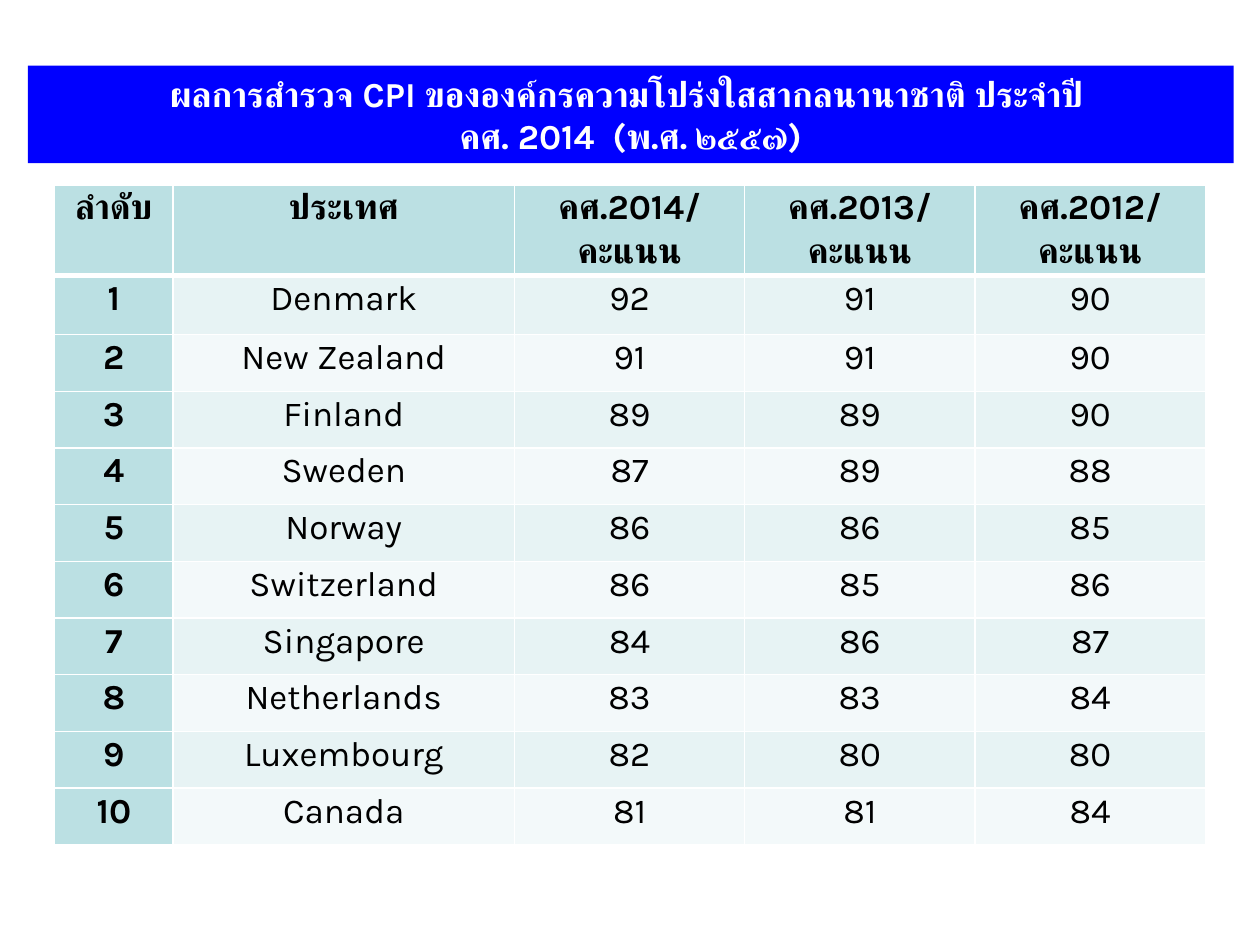
from lxml import etree
from pptx import Presentation
from pptx.dml.color import RGBColor
from pptx.enum.text import MSO_ANCHOR, MSO_AUTO_SIZE, PP_ALIGN
from pptx.oxml.ns import qn
from pptx.util import Pt

FONT = "Karla"
TITLE = ["ผลการสำรวจ CPI ขององค์กรความโปร่งใสสากลนานาชาติ ประจำปี ",
         "คศ. 2014  (พ.ศ. ๒๕๕๗)"]
HEADER = ["ลำดับ", "ประเทศ", "คศ.2014/คะแนน", "คศ.2013/คะแนน", "คศ.2012/คะแนน"]
SCORES = [
    ("Denmark", 92, 91, 90),
    ("New Zealand", 91, 91, 90),
    ("Finland", 89, 89, 90),
    ("Sweden", 87, 89, 88),
    ("Norway", 86, 86, 85),
    ("Switzerland", 86, 85, 86),
    ("Singapore", 84, 86, 87),
    ("Netherlands", 83, 83, 84),
    ("Luxembourg", 82, 80, 80),
    ("Canada", 81, 81, 84),
]


def rgb(value):
    return RGBColor.from_string(value)


def write(p, text, size=20, color="000000", bold=False, spacing=None):
    p.alignment = PP_ALIGN.CENTER
    if spacing:
        p.line_spacing = spacing
    r = p.add_run()
    r.text = text
    r.font.size = Pt(size)
    r.font.bold = bold
    r.font.name = FONT
    r.font.color.rgb = rgb(color)
    etree.SubElement(r.font._element, qn("a:cs"), typeface=FONT)


def add_border(cell, side, width, color="FFFFFF"):
    tcPr = cell._tc.get_or_add_tcPr()
    ln = etree.SubElement(tcPr, qn(f"a:ln{side}"), w=str(Pt(width)))
    fill = etree.SubElement(ln, qn("a:solidFill"))
    etree.SubElement(fill, qn("a:srgbClr"), val=color)


def add_title(s, left, top, width, height):
    sp = s.shapes.title
    sp.left, sp.top, sp.width, sp.height = map(Pt, (left, top, width, height))
    sp.fill.solid()
    sp.fill.fore_color.rgb = rgb("0000FF")
    tf = sp.text_frame
    tf.word_wrap = True
    tf.auto_size = MSO_AUTO_SIZE.NONE
    tf.vertical_anchor = MSO_ANCHOR.MIDDLE
    for i, line in enumerate(TITLE):
        p = tf.add_paragraph() if i else tf.paragraphs[0]
        write(p, line, color="FFFFFF", bold=True)


def add_scores(s, left, top, width, height):
    rows = [HEADER] + [(rank, *score) for rank, score in enumerate(SCORES, 1)]
    table = s.shapes.add_table(len(rows), len(HEADER), Pt(left), Pt(top),
                               Pt(width), Pt(height)).table
    rank_w, country_w, header_h, first_h = 67.7, 195.1, 51.8, 33.8
    score_w = (width - rank_w - country_w) / 3
    row_h = (height - header_h - first_h) / (len(SCORES) - 1)
    for col, w in zip(table.columns, [rank_w, country_w] + [score_w] * 3):
        col.width = Pt(w)
    for i, values in enumerate(rows):
        table.rows[i].height = Pt({0: header_h, 1: first_h}.get(i, row_h))
        for j, value in enumerate(values):
            cell = table.cell(i, j)
            heading = i == 0 or j == 0
            cell.margin_left = cell.margin_right = Pt(5)
            cell.margin_top = cell.margin_bottom = 0
            for side in "LRTB":
                thick = (i, side) in ((0, "B"), (1, "T"))
                add_border(cell, side, 3 if thick else 1)
            cell.fill.solid()
            band = "E7F3F4" if i % 2 else "F3F9FA"
            cell.fill.fore_color.rgb = rgb("BBE0E3" if heading else band)
            write(cell.text_frame.paragraphs[0], str(value), bold=heading, spacing=1.07)


def main():
    prs = Presentation()
    prs.slide_width, prs.slide_height = Pt(720), Pt(540)
    s = prs.slides.add_slide(prs.slide_layouts[5])
    add_title(s, 16, 37.5, 689, 55.7)
    add_scores(s, 31.2, 105.6, 657.6, 377.3)
    prs.save("out.pptx")


if __name__ == "__main__":
    main()
